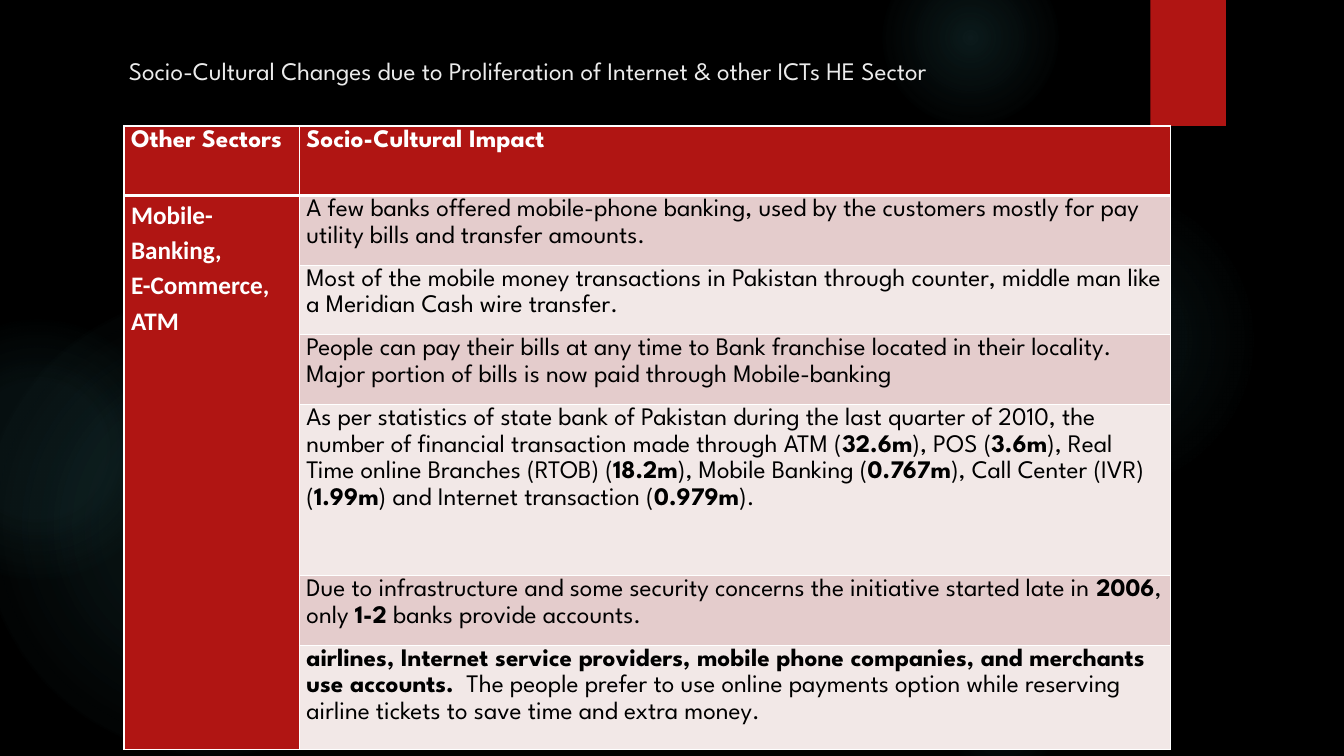
from dataclasses import dataclass

from lxml import etree
from pptx import Presentation
from pptx import util as u
from pptx.dml import color
from pptx.enum import shapes, text
from pptx.oxml import ns
from pptx.slide import Slide
from pptx.table import _Cell
from pptx.text.text import TextFrame

COLORS = {
    "background": "000000",
    "glow": "50B9C1",
    "accent": "B01513",
    "title": "EBEBEB",
    "white": "FFFFFF",
    "black": "000000",
    "dark band": "E4CCCC",
    "light band": "F2E8E7",
}
HEADING_FONT = "League Spartan"
SECTOR_FONT = "Calibri"
COLUMN_WIDTHS = [1.74, 8.64]
ROW_HEIGHTS = [0.69, 0.69, 0.66, 0.66, 1.7, 0.66, 1.01]
HEADERS = ["Other Sectors", "Socio-Cultural Impact"]
SECTORS = ["Mobile-Banking,", "E-Commerce, ATM"]
IMPACTS = [
    "A few banks offered mobile-phone banking, used by the customers mostly for pay "
    "utility bills and transfer amounts.",
    "Most of the mobile money transactions in Pakistan through counter, middle man like "
    "a Meridian Cash wire transfer.",
    "People can pay their bills at any time to Bank franchise located in their locality. "
    "Major portion of bills is now paid through Mobile-banking",
    "As per statistics of state bank of Pakistan during the last quarter of 2010, the "
    "number of financial transaction made through ATM (**32.6m**), POS (**3.6m**), Real "
    "Time online Branches (RTOB) (**18.2m**), Mobile Banking (**0.767m**), Call Center (IVR) "
    "(**1.99m**) and Internet transaction (**0.979m**).",
    "Due to infrastructure and some security concerns the initiative started late in "
    "**2006**, only **1-2** banks provide accounts.",
    "**airlines, Internet service providers, mobile phone companies, and merchants "
    "use accounts.**  The people prefer to use online payments option while reserving "
    "airline tickets to save time and extra money.",
]


@dataclass
class Glow:
    left: float
    top: float
    size: float
    stops: list[tuple[int, int]]


GLOWS = [
    Glow(-0.17, 2.92, 4.58, [(0, 10), (36, 8), (75, 0)]),
    Glow(-0.92, 3.17, 2.58, [(0, 8), (36, 8), (72, 0)]),
    Glow(9.41, 1.83, 3.08, [(0, 7), (36, 6), (69, 0)]),
    Glow(8.75, -0.5, 1.75, [(0, 14), (36, 7), (73, 0)]),
    Glow(9.41, 6.67, 1.08, [(0, 11), (30, 5), (67, 0)]),
]


def rgb(name: str) -> color.RGBColor:
    return color.RGBColor.from_string(COLORS[name])


def add_element(parent: etree._Element, tag: str, **attributes: object) -> etree._Element:
    values = {key: str(value) for key, value in attributes.items()}
    return etree.SubElement(parent, ns.qn(f"a:{tag}"), values)


def add_color(parent: etree._Element, name: str, alpha: int = 100) -> None:
    tint = add_element(parent, "srgbClr", val=COLORS[name])
    if alpha < 100:
        add_element(tint, "alpha", val=alpha * 1000)


def draw_glow(page: Slide, glow: Glow) -> None:
    size = u.Inches(glow.size)
    ellipse = page.shapes.add_shape(
        shapes.MSO_SHAPE.OVAL, u.Inches(glow.left), u.Inches(glow.top), size, size
    )
    ellipse.shadow.inherit = False
    ellipse.line.fill.background()
    gradient = etree.Element(ns.qn("a:gradFill"), rotWithShape="1")
    stops = add_element(gradient, "gsLst")
    for position, alpha in glow.stops:
        add_color(add_element(stops, "gs", pos=position * 1000), "glow", alpha)
    shade = add_element(gradient, "path", path="circle")
    add_element(shade, "fillToRect", l=50000, t=50000, r=50000, b=50000)
    ellipse._element.spPr.find(ns.qn("a:prstGeom")).addnext(gradient)


def draw_ribbon(page: Slide) -> None:
    ribbon = page.shapes.add_shape(
        shapes.MSO_SHAPE.RECTANGLE, u.Inches(11.41), 0, u.Inches(0.75), u.Inches(1.25)
    )
    ribbon.fill.solid()
    ribbon.fill.fore_color.rgb = rgb("accent")
    ribbon.line.fill.background()
    ribbon.shadow.inherit = False
    effects = ribbon._element.spPr.find(ns.qn("a:effectLst"))
    shadow = add_element(
        effects, "outerShdw", blurRad=u.Pt(3), dist=u.Pt(2), dir=90 * 60000, rotWithShape=0
    )
    add_color(shadow, "black", 45)


def write_text(
    frame: TextFrame,
    lines: list[str],
    *,
    ink: str,
    font: str = HEADING_FONT,
    size: float = 18,
    bold: bool = False,
    align: text.PP_ALIGN = text.PP_ALIGN.LEFT,
    spacing: float = 1.0,
) -> None:
    frame.word_wrap = True
    for index, line in enumerate(lines):
        para = frame.add_paragraph() if index else frame.paragraphs[0]
        para.alignment = align
        para.line_spacing = spacing
        for part, words in enumerate(line.split("**")):
            if words:
                span = para.add_run()
                span.text = words
                span.font.name = font
                span.font.size = u.Pt(size)
                span.font.bold = bold or part % 2 == 1
                span.font.color.rgb = rgb(ink)


def style_cell(cell: _Cell, fill: str, top: float, bottom: float) -> None:
    cell.margin_left = cell.margin_right = u.Inches(0.07)
    cell.margin_top = cell.margin_bottom = 0
    cell.vertical_anchor = text.MSO_ANCHOR.TOP
    properties = cell._tc.get_or_add_tcPr()
    for side, width in {"L": 1, "R": 1, "T": top, "B": bottom}.items():
        border = add_element(properties, f"ln{side}", w=u.Pt(width))
        add_color(add_element(border, "solidFill"), "white")
    cell.fill.solid()
    cell.fill.fore_color.rgb = rgb(fill)


def draw_table(page: Slide) -> None:
    table = page.shapes.add_table(
        len(ROW_HEIGHTS), len(COLUMN_WIDTHS), u.Inches(1.23), u.Inches(1.25),
        u.Inches(sum(COLUMN_WIDTHS)), u.Inches(sum(ROW_HEIGHTS)),
    ).table
    table.first_row = table.horz_banding = False
    for column, width in zip(table.columns, COLUMN_WIDTHS):
        column.width = u.Inches(width)
    for index, (row, height) in enumerate(zip(table.rows, ROW_HEIGHTS)):
        row.height = u.Inches(height)
        band = "dark band" if index % 2 else "light band"
        fills = ["accent", band if index else "accent"]
        for cell, fill in zip(row.cells, fills):
            style_cell(cell, fill, 3 if index == 1 else 1, 3 if index == 0 else 1)
    for column, header in enumerate(HEADERS):
        write_text(table.cell(0, column).text_frame, [header],
                   ink="white", bold=True, spacing=1.15)
    sector = table.cell(1, 0)
    sector.merge(table.cell(len(IMPACTS), 0))
    write_text(sector.text_frame, SECTORS, ink="white", font=SECTOR_FONT, bold=True,
               align=text.PP_ALIGN.JUSTIFY, spacing=1.15)
    for index, impact in enumerate(IMPACTS, start=1):
        write_text(table.cell(index, 1).text_frame, [impact], ink="black", spacing=1.15)


def main() -> None:
    deck = Presentation()
    deck.slide_width, deck.slide_height = u.Inches(13.33), u.Inches(7.5)
    page = deck.slides.add_slide(deck.slide_layouts[6])
    page.background.fill.solid()
    page.background.fill.fore_color.rgb = rgb("background")
    for glow in GLOWS:
        draw_glow(page, glow)
    draw_ribbon(page)
    box = page.shapes.add_textbox(u.Inches(1.18), u.Inches(0.5), u.Inches(10.04), u.Inches(0.62))
    write_text(
        box.text_frame,
        ["Socio-Cultural Changes due to Proliferation of Internet & other ICTs HE Sector"],
        ink="title",
    )
    draw_table(page)
    deck.save("out.pptx")


if __name__ == "__main__":
    main()
